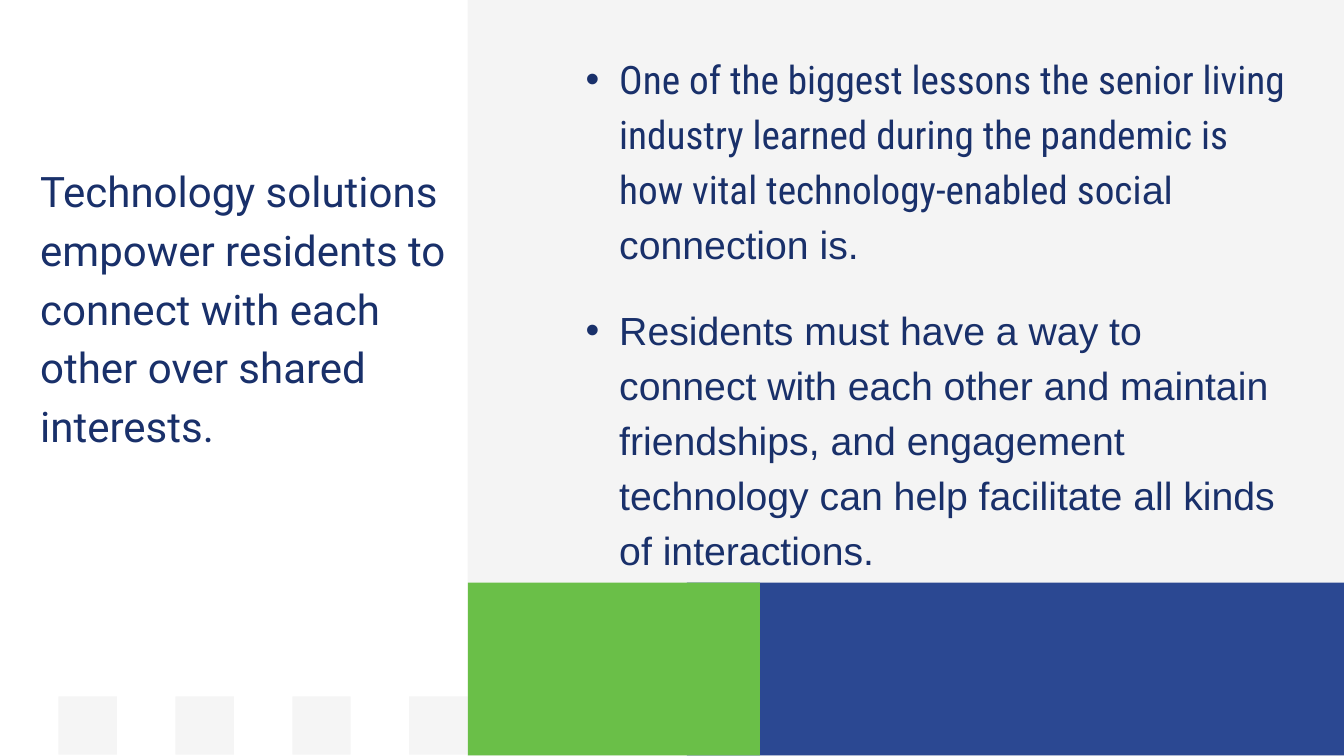
import pptx
import pptx.dml.color
import pptx.enum.shapes
import pptx.enum.text
import pptx.oxml.ns
import pptx.util
import lxml.etree
from collections import namedtuple

Box = namedtuple("Box", "left top width height")

WIDTH, HEIGHT = 20, 11.25
SIDE_WIDTH = 6.96
BAND_TOP, BAND_HEIGHT = 8.67, 2.57
SIDE_COLUMNS = 8
COLORS = {
    "ground": "F4F4F4",
    "panel": "FFFFFF",
    "green": "6ABF48",
    "blue": "2B4892",
    "ink": "19306A",
    "shade": "000000",
}
HEADLINE = "Technology solutions empower residents to connect with each other over shared interests."
POINTS = [
    [
        ("One of the biggest lessons the senior living industry learned during "
         "the pandemic is how vital technology-enabled soci", "Roboto Condensed"),
        ("al connection is.", "Arial"),
    ],
    [
        ("Residents must have a way to connect with each other and maintain friendships, "
         "and engagement technology can help facilitate all kinds of interactions.", "Arial"),
    ],
]


def color(name):
    return pptx.dml.color.RGBColor.from_string(COLORS[name])


def inches(box):
    return [pptx.util.Inches(length) for length in box]


def share(box, left, top, width, height):
    return Box(box.left + left * box.width, box.top + top * box.height,
               width * box.width, height * box.height)


def add_block(shapes, box, fill, opacity=None):
    block = shapes.add_shape(pptx.enum.shapes.MSO_SHAPE.RECTANGLE, *inches(box))
    block.shadow.inherit = False
    block.line.fill.background()
    block.fill.solid()
    block.fill.fore_color.rgb = color(fill)
    if opacity is not None:
        tint = block.fill._xPr.find(".//" + pptx.oxml.ns.qn("a:srgbClr"))
        alpha = lxml.etree.SubElement(tint, pptx.oxml.ns.qn("a:alpha"))
        alpha.set("val", str(opacity * 1000))


def add_text_frame(page, box):
    frame = page.shapes.add_textbox(*inches(box)).text_frame
    frame.word_wrap = True
    frame.auto_size = pptx.enum.text.MSO_AUTO_SIZE.SHAPE_TO_FIT_TEXT
    frame.margin_left = frame.margin_top = frame.margin_right = frame.margin_bottom = 0
    return frame


def style_paragraph(para, size):
    para.line_spacing = pptx.util.Pt(size * 1.4)
    para.font.size = pptx.util.Pt(size)
    para.font.color.rgb = color("ink")


def add_bullet(para):
    props = para._p.get_or_add_pPr()
    props.set("marL", str(pptx.util.Inches(0.99)))
    props.set("indent", str(pptx.util.Inches(-0.5)))
    face = lxml.etree.SubElement(props, pptx.oxml.ns.qn("a:buFont"))
    face.set("typeface", "Arial")
    mark = lxml.etree.SubElement(props, pptx.oxml.ns.qn("a:buChar"))
    mark.set("char", "•")


def add_color_band(page, box):
    add_block(page.shapes, share(box, 0.25, 0, 0.75, 1), "blue")
    add_block(page.shapes, share(box, 0, 0, 1 / 3, 1), "green")


def add_side_panel(page, box):
    add_block(page.shapes, box, "panel")
    side = box.width / SIDE_COLUMNS
    checks = page.shapes.add_group_shape()
    for column in range(1, SIDE_COLUMNS, 2):
        square = Box(box.left + column * side, box.top + 0.921 * box.height, side, side)
        add_block(checks.shapes, square, "shade", opacity=4)

    para = add_text_frame(page, share(box, 0.086, 0.208, 0.894, 0.464)).paragraphs[0]
    para.text = HEADLINE
    style_paragraph(para, 45)
    para.font.name = "Roboto"


def add_points(page, box):
    frame = add_text_frame(page, share(box, 0.097, 0.082, 0.841, 0.894))
    for index, spans in enumerate(POINTS):
        para = frame.paragraphs[0] if index == 0 else frame.add_paragraph()
        para.level = 1
        add_bullet(para)
        style_paragraph(para, 42)
        if index:
            para.space_before = pptx.util.Pt(33.6)
        for text, font in spans:
            span = para.add_run()
            span.text = text
            span.font.name = font


def main():
    deck = pptx.Presentation()
    deck.slide_width = pptx.util.Inches(WIDTH)
    deck.slide_height = pptx.util.Inches(HEIGHT)
    page = deck.slides.add_slide(deck.slide_layouts[6])
    page.background.fill.solid()
    page.background.fill.fore_color.rgb = color("ground")

    main_width = WIDTH - SIDE_WIDTH
    add_color_band(page, Box(SIDE_WIDTH, BAND_TOP, main_width, BAND_HEIGHT))
    add_side_panel(page, Box(0, 0, SIDE_WIDTH, HEIGHT))
    add_points(page, Box(SIDE_WIDTH, 0, main_width, BAND_TOP))
    deck.save("out.pptx")


if __name__ == "__main__":
    main()
